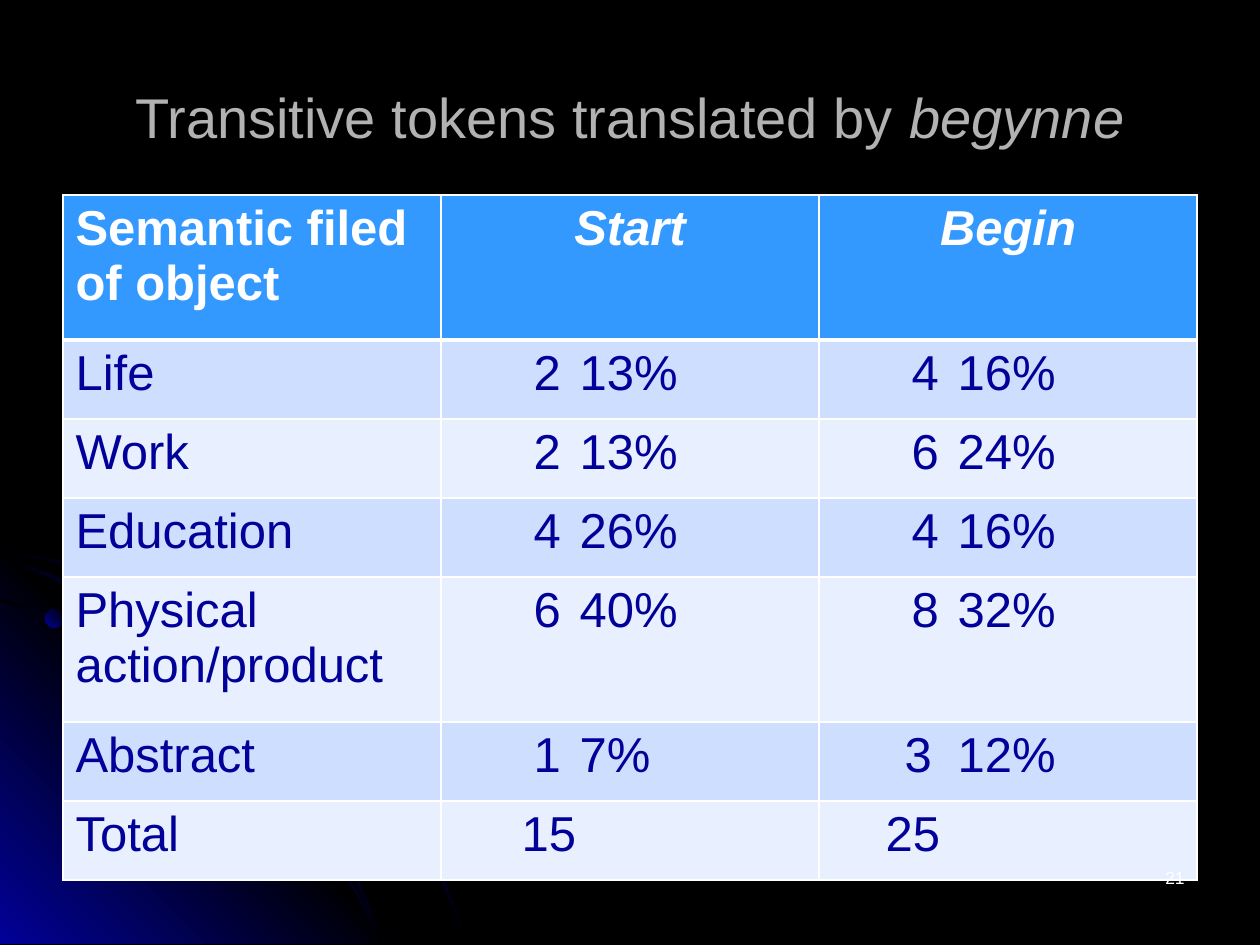
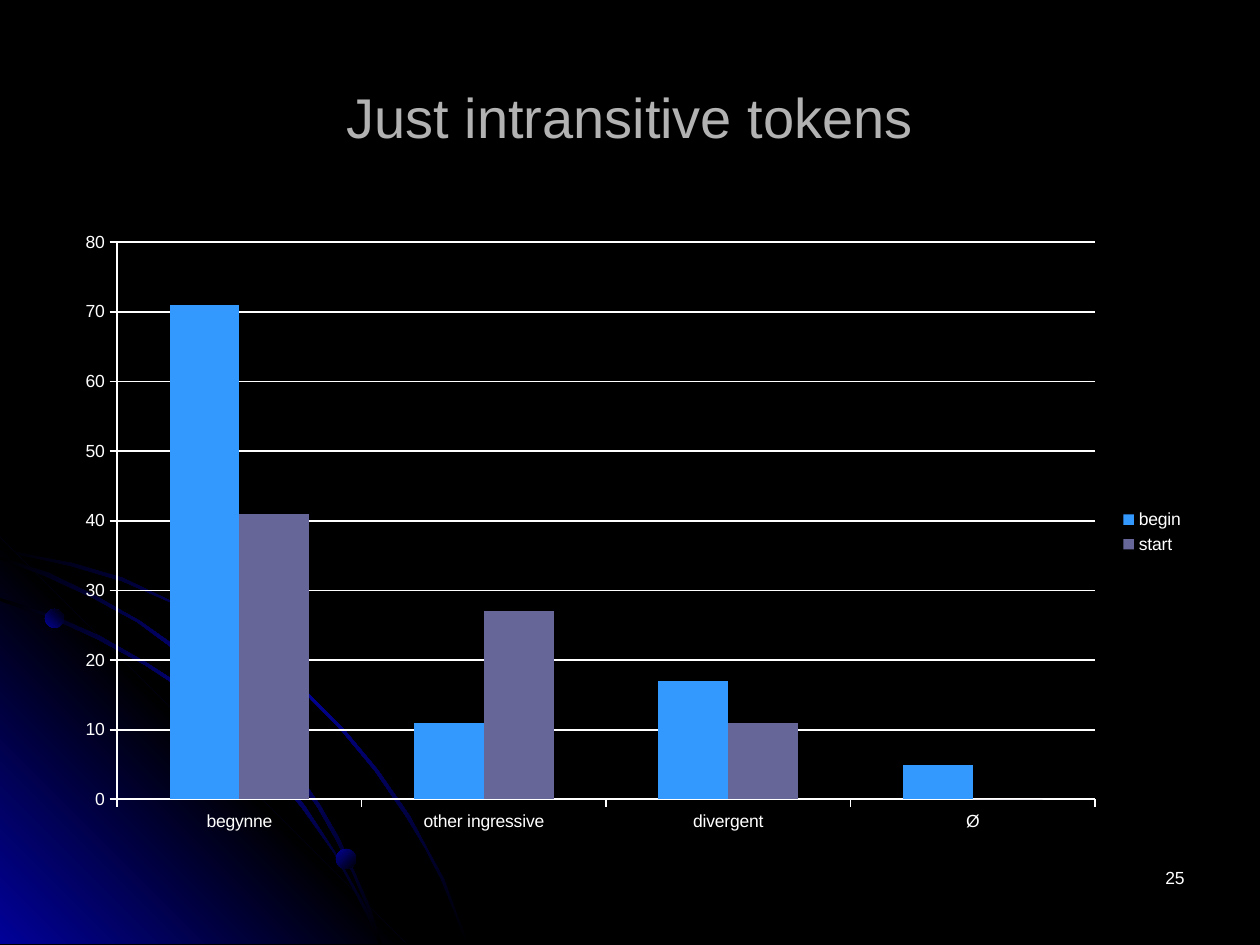
from copy import deepcopy
from dataclasses import dataclass

from lxml import etree
from pptx import Presentation
from pptx import util as u
from pptx.chart import data as cd
from pptx.dml.color import RGBColor
from pptx.enum import chart as ch
from pptx.enum import shapes as sh
from pptx.enum import text as tx
from pptx.oxml import ns

PX = 914400 / 126


@dataclass(frozen=True)
class Theme:
    font: str = "Arial"
    black: str = "000000"
    navy: str = "010199"
    white: str = "FFFFFF"
    grey: str = "B2B2B2"
    blue: str = "3399FF"
    plum: str = "666699"
    bands: tuple = ("CEDEFF", "E8EFFF")
    title: int = 32
    cell: int = 28
    small: int = 10


T = Theme()
TITLE = (63, 38, 1134, 157)
TABLE = (63, 195, 1134, 685)
CHART = (63, 220, 1134, 624)
FOOT = (903, 861, 294, 63)

OUTER = [
    (72, 563), (35, 556), (0, 548), (0, 552), (35, 558), (71, 566),
    (122, 581), (170, 602), (218, 629), (262, 659), (304, 692), (341, 730),
    (375, 771), (407, 818), (425, 848), (441, 879), (454, 911), (466, 944),
    (469, 944), (456, 911), (444, 879), (427, 848), (410, 816), (378, 770),
    (343, 728), (305, 690), (263, 656), (219, 626), (171, 601), (123, 578),
]
WEDGE = [(406, 944), (0, 944), (0, 538)]
INNER = [
    (359, 900), (370, 922), (379, 944), (382, 944), (373, 920), (360, 897),
    (335, 852), (305, 806), (271, 764), (232, 726), (192, 692), (147, 663),
    (100, 636), (52, 615), (0, 598), (0, 601), (49, 617), (97, 639),
    (145, 665), (189, 694), (231, 728), (268, 766), (302, 808), (334, 853),
]
MIDDLE = [
    (0, 557), (0, 559), (45, 576), (93, 598), (137, 622), (179, 653),
    (218, 685), (255, 724), (286, 762), (318, 808), (336, 840), (353, 874),
    (368, 910), (379, 944), (382, 944), (370, 907), (355, 873), (339, 838),
    (320, 805), (289, 760), (257, 722), (220, 684), (181, 650), (140, 621),
    (96, 596), (49, 573),
]
GLOW = (T.black, T.navy, T.black)
EDGE = (T.navy, T.black, T.navy)
BALL = (T.navy, T.black)
CURVES = [(OUTER, GLOW, 45), (WEDGE, EDGE, 315),
          (INNER, GLOW, 45), (MIDDLE, GLOW, 45)]
DOTS = [(45, 609, 19, 315), (336, 849, 20, 45), (173, 596, 26, 315)]

HEADS = ("Semantic filed of object", "Start", "Begin")
ROWS = [
    ("Life", "2\t13%", "4\t16%"),
    ("Work", "2\t13%", "6\t24%"),
    ("Education", "4\t26%", "4\t16%"),
    ("Physical action/product", "6\t40%", "8\t32%"),
    ("Abstract", "1\t7%", "3\t12%"),
    ("Total", "15", "25"),
]
TALL, LOW = 145, 79
HEIGHTS = (TALL, LOW, LOW, LOW, TALL, LOW, LOW)
STOPS = (80, 272)
SHIFTS = {"3\t12%": (73, 279), "15": (68, 272), "25": (54, 272)}

CATS = ("begynne", "other ingressive", "divergent", "Ø")
SERIES = [("begin", (71, 11, 17, 5), T.blue),
          ("start", (41, 27, 11, 0), T.plum)]


def emu(*vals):
    return [u.Emu(round(v * PX)) for v in vals]


def rgb(code):
    return RGBColor.from_string(code)


def ink(font, size, color, bold=False, slant=False):
    font.name, font.size = T.font, u.Pt(size)
    font.color.rgb = rgb(color)
    font.bold, font.italic = bold, slant


def blend(shape, colors, angle):
    shape.shadow.inherit = False
    shape.line.fill.background()
    fill = shape.fill
    fill.gradient()
    fill.gradient_angle = 360 - angle
    stops = shape.element.spPr.find(".//" + ns.qn("a:gsLst"))
    if len(colors) == 3:
        stops.append(deepcopy(stops[0]))
    for n, (stop, color) in enumerate(zip(fill.gradient_stops, colors)):
        stop.color.rgb = rgb(color)
        stop.position = n / (len(colors) - 1)


def backdrop(master, slide):
    master.background.fill.solid()
    master.background.fill.fore_color.rgb = rgb(T.black)
    parts = []
    for points, colors, angle in CURVES:
        pen = slide.shapes.build_freeform(*points[0], scale=PX)
        pen.add_line_segments(points[1:], close=True)
        parts.append(pen.convert_to_shape())
        blend(parts[-1], colors, angle)
    for x, y, size, angle in DOTS:
        dot = slide.shapes.add_shape(sh.MSO_SHAPE.OVAL, *emu(x, y, size, size))
        blend(dot, BALL, angle)
        parts.append(dot)
    tree = master.element.cSld.spTree
    for n, part in enumerate(parts):
        tree.insert(2 + n, part.element)


def heading(slide, box, *words):
    title = slide.shapes.title
    title.left, title.top, title.width, title.height = emu(*box)
    frame = title.text_frame
    frame.vertical_anchor = tx.MSO_ANCHOR.MIDDLE
    para = frame.paragraphs[0]
    para.alignment = tx.PP_ALIGN.CENTER
    for n, word in enumerate(words):
        run = para.add_run()
        run.text = word
        ink(run.font, T.title, T.grey, slant=n > 0)


def footer(slide, box, number):
    frame = slide.shapes.add_textbox(*emu(*box)).text_frame
    frame.word_wrap = True
    para = frame.paragraphs[0]
    para.text = number
    para.alignment = tx.PP_ALIGN.RIGHT
    ink(para.runs[0].font, T.small, T.white)


def border(cell, row):
    props = cell._tc.get_or_add_tcPr()
    for side in "LRTB":
        thick = (row, side) in ((0, "B"), (1, "T"))
        line = etree.SubElement(props, ns.qn("a:ln" + side),
                                w=str(u.Pt(3 if thick else 1)))
        fill = etree.SubElement(line, ns.qn("a:solidFill"))
        etree.SubElement(fill, ns.qn("a:srgbClr"), val=T.white)


def align(para, lead, stop):
    props = para._p.get_or_add_pPr()
    lead, stop = emu(lead, stop)
    props.set("marL", "0")
    props.set("indent", str(lead))
    tabs = etree.SubElement(props, ns.qn("a:tabLst"))
    etree.SubElement(tabs, ns.qn("a:tab"), pos=str(stop), algn="r")


def grid(slide, box):
    data = [HEADS] + ROWS
    table = slide.shapes.add_table(len(data), len(HEADS), *emu(*box)).table
    table.first_row = table.horz_banding = False
    for col in table.columns:
        col.width = emu(box[2] / len(HEADS))[0]
    for r, (words, height) in enumerate(zip(data, HEIGHTS)):
        table.rows[r].height = emu(height)[0]
        for c, word in enumerate(words):
            cell = table.cell(r, c)
            border(cell, r)
            cell.fill.solid()
            head = r == 0
            shade = T.blue if head else T.bands[(r - 1) % 2]
            cell.fill.fore_color.rgb = rgb(shade)
            para = cell.text_frame.paragraphs[0]
            para.text = word
            if c and head:
                para.alignment = tx.PP_ALIGN.CENTER
            elif c:
                align(para, *SHIFTS.get(word, STOPS))
            ink(para.runs[0].font, T.cell, T.white if head else T.navy,
                bold=head, slant=head and c > 0)


def stroke(line):
    line.color.rgb = rgb(T.white)
    line.width = u.Pt(1)


def bars(slide, box):
    data = cd.CategoryChartData()
    data.categories = CATS
    for name, vals, _ in SERIES:
        data.add_series(name, vals)
    chart = slide.shapes.add_chart(ch.XL_CHART_TYPE.COLUMN_CLUSTERED,
                                   *emu(*box), data).chart
    ink(chart.font, T.small, T.white)
    chart.has_title = False
    chart.has_legend = True
    chart.legend.position = ch.XL_LEGEND_POSITION.RIGHT
    chart.legend.include_in_layout = False
    plot = chart.plots[0]
    plot.vary_by_categories = False
    plot.gap_width, plot.overlap = 150, 0
    for series, (_, _, color) in zip(plot.series, SERIES):
        series.format.fill.solid()
        series.format.fill.fore_color.rgb = rgb(color)
    for axis in (chart.category_axis, chart.value_axis):
        axis.major_tick_mark = ch.XL_TICK_MARK.OUTSIDE
        stroke(axis.format.line)
    scale = chart.value_axis
    scale.minimum_scale, scale.maximum_scale = 0, 80
    scale.major_unit = 10
    scale.has_major_gridlines = True
    stroke(scale.major_gridlines.format.line)


def main():
    prs = Presentation()
    prs.slide_width, prs.slide_height = emu(1260, 945)
    layout = prs.slide_layouts[5]
    tokens, counts = [prs.slides.add_slide(layout) for _ in range(2)]
    backdrop(prs.slide_master, tokens)

    heading(tokens, TITLE, "Transitive tokens translated by ", "begynne")
    grid(tokens, TABLE)
    footer(tokens, FOOT, "21")

    heading(counts, TITLE, "Just intransitive tokens")
    footer(counts, FOOT, "25")
    bars(counts, CHART)
    prs.save("out.pptx")


if __name__ == "__main__":
    main()
